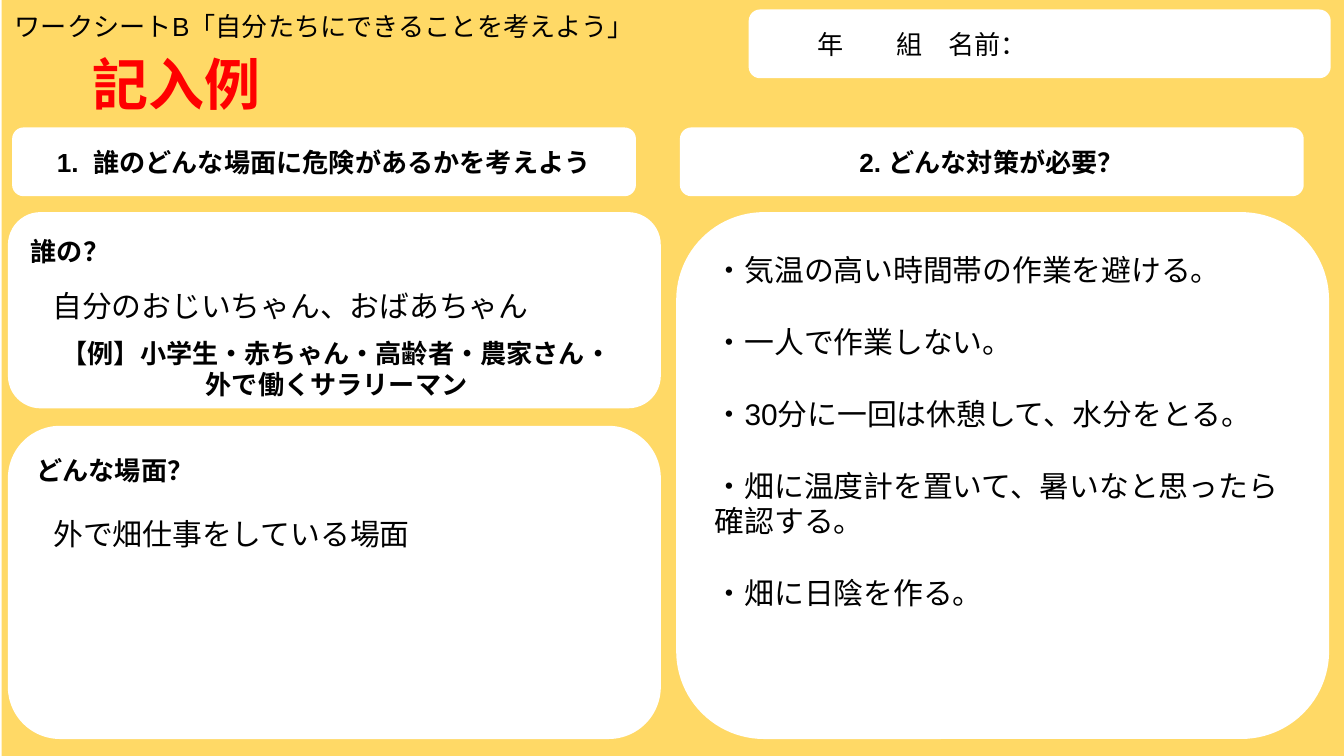
from pptx import Presentation
from pptx.dml.color import RGBColor
from pptx.enum.shapes import MSO_SHAPE as Shape
from pptx.enum.text import MSO_ANCHOR as Anchor, MSO_AUTO_SIZE as AutoSize, PP_ALIGN as Align
from pptx.oxml.ns import qn
from pptx.util import Cm, Pt

YELLOW, WHITE, BLACK, RED = "FFD966", "FFFFFF", "000000", "FF0000"
LEFT_X, RIGHT_X, PANEL_W = 0.15, 12.78, 12.34
PANEL_TOP, PANEL_BOTTOM, LOWER_TOP = 4.01, 13.97, 8.05
HEADING_TOP, HEADING_W, BAR_H = 2.41, 11.79, 1.3

MEASURES = [
    "・気温の高い時間帯の作業を避ける。",
    "・一人で作業しない。",
    "・30分に一回は休憩して、水分をとる。",
    "・畑に温度計を置いて、暑いなと思ったら確認する。",
    "・畑に日陰を作る。",
]


def rgb(color):
    return RGBColor.from_string(color)


def write(sp, lines, size=14, bold=False, color=BLACK, align=Align.LEFT,
          anchor=Anchor.TOP, gap=0, inset=0.25):
    """Fill a shape with one paragraph per line, gap points apart."""
    tf = sp.text_frame
    tf.text = "\n".join(lines)
    tf.word_wrap = True
    tf.vertical_anchor = anchor
    tf.margin_left = tf.margin_right = tf.margin_top = tf.margin_bottom = Cm(inset)
    for i, p in enumerate(tf.paragraphs):
        p.alignment = align
        p.space_before = Pt(gap if i else 0)
        for r in p.runs:
            r.font.name = "Arial"
            r.font.size = Pt(size)
            r.font.bold = bold
            r.font.color.rgb = rgb(color)


def add_box(slide, x, y, w, h, fill=WHITE, kind=Shape.ROUNDED_RECTANGLE):
    sp = slide.shapes.add_shape(kind, Cm(x), Cm(y), Cm(w), Cm(h))
    sp.shadow.inherit = False
    sp.line.fill.background()
    if fill:
        sp.fill.solid()
        sp.fill.fore_color.rgb = rgb(fill)
    else:
        sp.fill.background()
    return sp


def add_bar(slide, x, y, w, lines, fill=WHITE, bold=True, align=Align.CENTER):
    sp = add_box(slide, x, y, w, BAR_H, fill)
    write(sp, lines, bold=bold, align=align, anchor=Anchor.MIDDLE)


def add_text(slide, x, y, w, h, text, **style):
    sp = slide.shapes.add_textbox(Cm(x), Cm(y), Cm(w), Cm(h))
    write(sp, [text], **style)


def place(sp, x, y, w, h):
    """Move a placeholder and bring it to the front."""
    sp.left, sp.top, sp.width, sp.height = Cm(x), Cm(y), Cm(w), Cm(h)
    sp.element.getparent().append(sp.element)
    sp.text_frame.auto_size = AutoSize.NONE


def remove_bullets(sp):
    for p in sp.text_frame.paragraphs:
        props = p._p.get_or_add_pPr()
        props.set("marL", "0")
        props.set("indent", "0")
        props.append(props.makeelement(qn("a:buNone"), {}))


def main():
    prs = Presentation()
    prs.slide_width, prs.slide_height = Cm(25.4), Cm(14.29)
    slide = prs.slides.add_slide(prs.slide_layouts[1])
    title, body = slide.placeholders

    add_box(slide, 0.03, 0, 25.4, 14.29, YELLOW, Shape.RECTANGLE)
    add_bar(slide, 14.15, 0.18, 11, ["  年  組 名前:".replace(" ", "\u3000").replace(":", "：")],
            bold=False, align=Align.LEFT)
    add_bar(slide, 0.23, HEADING_TOP, HEADING_W, ["1.  誰のどんな場面に危険があるかを考えよう"])
    add_bar(slide, 12.85, HEADING_TOP, HEADING_W, ["2. どんな対策が必要？"])

    who = add_box(slide, LEFT_X, PANEL_TOP, PANEL_W, 3.71)
    write(who, ["誰の？"], bold=True)
    scene = add_box(slide, LEFT_X, LOWER_TOP, PANEL_W, PANEL_BOTTOM - LOWER_TOP)
    write(scene, ["どんな場面？"], bold=True)
    add_box(slide, RIGHT_X, PANEL_TOP, PANEL_W, PANEL_BOTTOM - PANEL_TOP)

    place(title, 0.03, -0.05, 13.11, 1.12)
    write(title, ["ワークシートB「自分たちにできることを考えよう」"])
    place(body, 13.26, 4.5, 11.38, 8.98)
    write(body, MEASURES, size=16, gap=19.4)
    remove_bullets(body)

    add_text(slide, 0.23, 0.69, 6.2, 1.8, "記入例", size=30, bold=True,
             color=RED, align=Align.CENTER)
    add_text(slide, 0.74, 5.18, 11.13, 1.19, "自分のおじいちゃん、おばあちゃん", size=16)
    add_text(slide, 0.76, 9.5, 11.13, 1.19, "外で畑仕事をしている場面", size=16)
    add_bar(slide, 0.23, 6.32, 12.27,
            ["【例】小学生・赤ちゃん・高齢者・農家さん・", "外で働くサラリーマン"], fill=None)
    prs.save("out.pptx")


if __name__ == "__main__":
    main()
